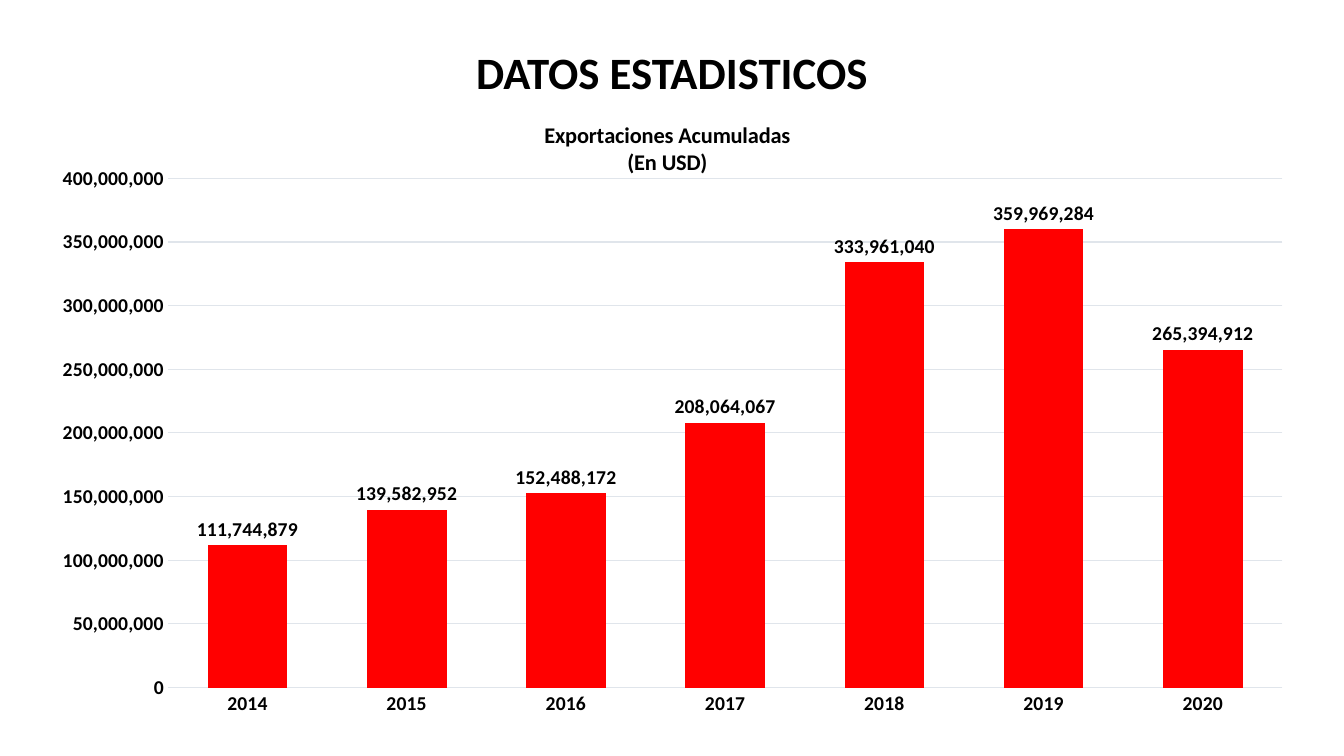
from lxml import etree
from pptx import Presentation
from pptx import util as u
from pptx.chart.data import CategoryChartData
from pptx.dml.color import RGBColor
from pptx.enum import chart as ch, text

TITLE = "DATOS ESTADISTICOS"
CHART_TITLE = ["Exportaciones Acumuladas", "(En USD)"]
EXPORTS = {
    "2014": 111744879,
    "2015": 139582952,
    "2016": 152488172,
    "2017": 208064067,
    "2018": 333961040,
    "2019": 359969284,
    "2020": 265394912,
}
NUMBER_FORMAT = "#,##0"
BLACK, RED, GRID = "000000", "FF0000", "E0E5EB"
PLOT_AREA = {"x": 0.11, "y": 0.124, "w": 0.87, "h": 0.793}
PLOT_AREA.update(x=0.111, w=0.868)


def color(hex_code):
    return RGBColor.from_string(hex_code)


def style_font(font, size):
    font.name = "Calibri"
    font.size = u.Pt(size)
    font.bold = True
    font.color.rgb = color(BLACK)


def style_line(line):
    line.color.rgb = color(GRID)
    line.width = u.Pt(0.75)


def set_plot_layout(chart, area):
    """Fix the inner plot area as fractions of the chart frame."""
    plot_area = chart.plots[0]._element.getparent()
    ns = "{%s}" % plot_area.nsmap["c"]
    for old in plot_area.findall(ns + "layout"):
        plot_area.remove(old)
    layout = etree.Element(ns + "layout")
    manual = etree.SubElement(layout, ns + "manualLayout")
    settings = [("layoutTarget", "inner"), ("xMode", "edge"), ("yMode", "edge")]
    for tag, value in settings + list(area.items()):
        etree.SubElement(manual, ns + tag).set("val", str(value))
    plot_area.insert(0, layout)


def add_title(slide):
    title = slide.shapes.title
    title.left, title.top = u.Cm(2.33), u.Cm(0.05)
    title.width, title.height = u.Cm(29.21), u.Cm(3.68)
    tf = title.text_frame
    tf.vertical_anchor = text.MSO_ANCHOR.MIDDLE
    p = tf.paragraphs[0]
    p.alignment = text.PP_ALIGN.CENTER
    p.line_spacing = 0.9
    r = p.add_run()
    r.text = TITLE
    style_font(r.font, 32)


def add_exports_chart(slide):
    data = CategoryChartData(number_format=NUMBER_FORMAT)
    data.categories = list(EXPORTS)
    data.add_series("Series 1", list(EXPORTS.values()))
    chart = slide.shapes.add_chart(
        ch.XL_CHART_TYPE.COLUMN_CLUSTERED,
        u.Cm(0.64), u.Cm(2.49), u.Cm(32.36), u.Cm(16.18), data).chart
    chart.has_legend = False
    chart.font.name = "Calibri"
    chart.font.size = u.Pt(10)
    chart.font.color.rgb = color(BLACK)

    chart.has_title = True
    tf = chart.chart_title.text_frame
    for i, line in enumerate(CHART_TITLE):
        p = tf.add_paragraph() if i else tf.paragraphs[0]
        r = p.add_run()
        r.text = line
        style_font(r.font, 16)

    for axis in (chart.category_axis, chart.value_axis):
        axis.major_tick_mark = axis.minor_tick_mark = ch.XL_TICK_MARK.NONE
        style_font(axis.tick_labels.font, 14)
    style_line(chart.category_axis.format.line)
    values = chart.value_axis
    values.minimum_scale, values.maximum_scale = 0, 400_000_000
    values.major_unit = 50_000_000
    values.format.line.fill.background()
    values.has_major_gridlines = True
    style_line(values.major_gridlines.format.line)
    values.tick_labels.number_format = NUMBER_FORMAT
    values.tick_labels.number_format_is_linked = False

    plot = chart.plots[0]
    plot.gap_width, plot.overlap = 100, -24
    plot.vary_by_categories = False
    series = plot.series[0]
    series.format.fill.solid()
    series.format.fill.fore_color.rgb = color(RED)
    labels = series.data_labels
    labels.show_value = True
    labels.position = ch.XL_LABEL_POSITION.OUTSIDE_END
    labels.number_format = NUMBER_FORMAT
    labels.number_format_is_linked = False
    style_font(labels.font, 14)
    set_plot_layout(chart, PLOT_AREA)


def main():
    prs = Presentation()
    prs.slide_width, prs.slide_height = u.Cm(33.87), u.Cm(19.05)
    slide = prs.slides.add_slide(prs.slide_layouts[5])
    add_title(slide)
    add_exports_chart(slide)
    prs.save("out.pptx")


if __name__ == "__main__":
    main()
